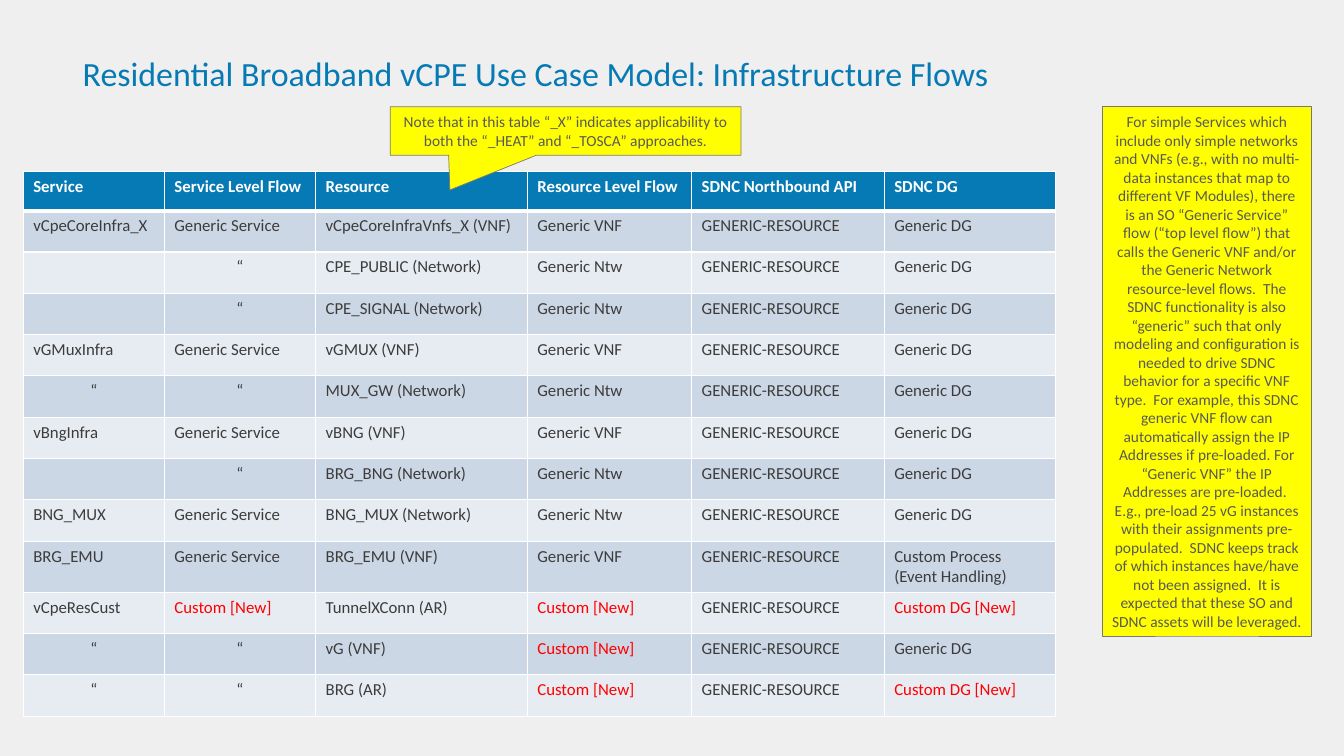
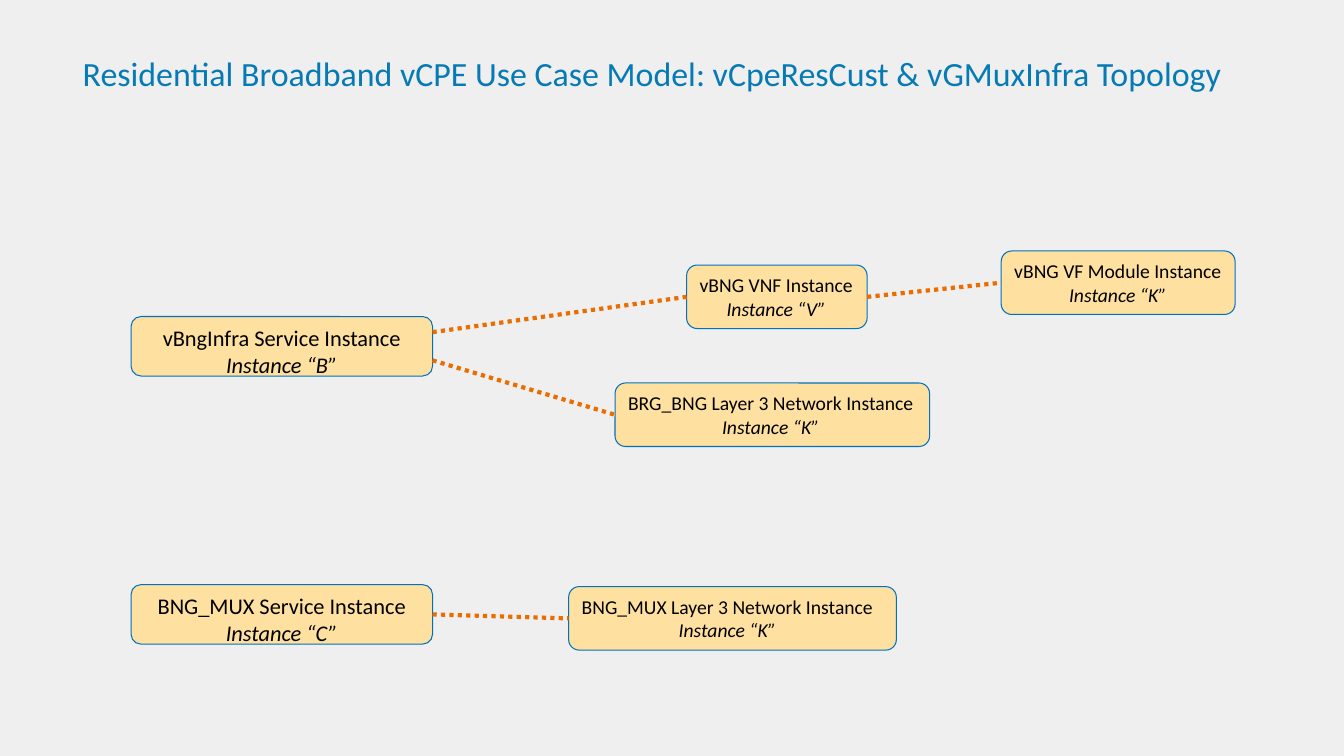
import copy

import pptx
import pptx.dml.color
import pptx.enum.dml
import pptx.enum.shapes
import pptx.enum.text
import pptx.oxml
import pptx.oxml.ns
import pptx.util

RGBColor = pptx.dml.color.RGBColor
Shape = pptx.enum.shapes.MSO_SHAPE
Align = pptx.enum.text.PP_ALIGN
Anchor = pptx.enum.text.MSO_ANCHOR

PX = 9144  # EMU in one px; 100 px to the inch
FONT = "Calibri"
BACKGROUND = RGBColor(0xEF, 0xEF, 0xEF)
BLUE = RGBColor(0x06, 0x7A, 0xB4)
WHITE = RGBColor(0xFF, 0xFF, 0xFF)
BLACK = RGBColor(0x00, 0x00, 0x00)
RED = RGBColor(0xFF, 0x00, 0x00)
CELL_TEXT = RGBColor(0x3C, 0x3C, 0x3C)
BANDS = (RGBColor(0xE7, 0xEC, 0xF2), RGBColor(0xCC, 0xD7, 0xE5))
YELLOW = RGBColor(0xFF, 0xFF, 0x00)
NOTE_LINE = RGBColor(0x78, 0x78, 0x78)
NOTE_TEXT = RGBColor(0x59, 0x59, 0x59)
SAND = RGBColor(0xFE, 0xE1, 0xA1)
NODE_LINE = RGBColor(0x00, 0x70, 0xC0)
ORANGE = RGBColor(0xEA, 0x6D, 0x00)

TITLE_STEM = "Residential Broadband vCPE Use Case Model: "
CALLOUT = ("Note that in this table “_X” indicates applicability to both the "
           "“_HEAT” and “_TOSCA” approaches.")
SIDE_NOTE = (
    "For simple Services which include only simple networks and VNFs (e.g., with no "
    "multi-data instances that map to different VF Modules), there is an SO “Generic "
    "Service” flow (“top level flow”) that calls the Generic VNF and/or the Generic "
    "Network resource-level flows.  The SDNC functionality is also “generic” such that "
    "only modeling and configuration is needed to drive SDNC behavior for a specific "
    "VNF type.  For example, this SDNC generic VNF flow can automatically assign the "
    "IP Addresses if pre-loaded. For “Generic VNF” the IP Addresses are pre-loaded.  "
    "E.g., pre-load 25 vG instances with their assignments pre-populated.  SDNC keeps "
    "track of which instances have/have not been assigned.  It is expected that these "
    "SO and SDNC assets will be leveraged.")

DITTO = "“"
API = "GENERIC-RESOURCE"
SERVICE, VNF, NETWORK, DG = "Generic Service", "Generic VNF", "Generic Ntw", "Generic DG"
CUSTOM, CUSTOM_DG = "Custom [New]", "Custom DG [New]"
COLUMN_WIDTHS = (140, 150, 210, 163, 191, 170)
FLOW_ROWS = (
    ("Service", "Service Level Flow", "Resource", "Resource Level Flow",
     "SDNC Northbound API", "SDNC DG"),
    ("vCpeCoreInfra_X", SERVICE, "vCpeCoreInfraVnfs_X (VNF)", VNF, API, DG),
    ("", DITTO, "CPE_PUBLIC (Network)", NETWORK, API, DG),
    ("", DITTO, "CPE_SIGNAL (Network)", NETWORK, API, DG),
    ("vGMuxInfra", SERVICE, "vGMUX (VNF)", VNF, API, DG),
    (DITTO, DITTO, "MUX_GW (Network)", NETWORK, API, DG),
    ("vBngInfra", SERVICE, "vBNG (VNF)", VNF, API, DG),
    ("", DITTO, "BRG_BNG (Network)", NETWORK, API, DG),
    ("BNG_MUX", SERVICE, "BNG_MUX (Network)", NETWORK, API, DG),
    ("BRG_EMU", SERVICE, "BRG_EMU (VNF)", VNF, API, "Custom Process\n(Event Handling)"),
    ("vCpeResCust", CUSTOM, "TunnelXConn (AR)", CUSTOM, API, CUSTOM_DG),
    (DITTO, DITTO, "vG (VNF)", CUSTOM, API, DG),
    (DITTO, DITTO, "BRG (AR)", CUSTOM, API, CUSTOM_DG),
)


def write(para, text, size, color, bold=False, italic=False, align=None):
    """Fill a paragraph; a newline in the text is a line break."""
    para.text = text
    para.alignment = align
    for span in para.runs:
        span.font.name = FONT
        span.font.size = pptx.util.Pt(size)
        span.font.color.rgb = color
        span.font.bold = bold
        span.font.italic = italic
    for line_break in para._p.findall(pptx.oxml.ns.qn("a:br")):
        line_break.append(copy.deepcopy(para.runs[0]._r.rPr))


def set_borders(cell, top, bottom):
    """Draw white cell borders; top and bottom are widths in points."""
    for side, width in (("L", 1), ("R", 1), ("T", top), ("B", bottom)):
        cell._tc.get_or_add_tcPr().append(pptx.oxml.parse_xml(
            f'<a:ln{side} {pptx.oxml.ns.nsdecls("a")} w="{pptx.util.Pt(width)}">'
            f'<a:solidFill><a:srgbClr val="{WHITE}"/></a:solidFill></a:ln{side}>'))


class Deck:
    def __init__(self):
        self.deck = pptx.Presentation()
        self.deck.slide_width = 1333 * PX
        self.deck.slide_height = 750 * PX
        fill = self.deck.slide_master.background.fill
        fill.solid()
        fill.fore_color.rgb = BACKGROUND
        self.page = None

    def add_page(self, topic):
        self.page = self.deck.slides.add_slide(self.deck.slide_layouts.get_by_name("Title Only"))
        title = self.page.shapes.title
        title.left, title.top, title.width, title.height = (
            length * PX for length in (82, 57, 1219, 50))
        frame = title.text_frame
        frame.margin_left = frame.margin_right = frame.margin_top = frame.margin_bottom = 0
        frame.vertical_anchor = Anchor.TOP
        frame.auto_size = pptx.enum.text.MSO_AUTO_SIZE.NONE
        para = frame.paragraphs[0]
        write(para, TITLE_STEM + topic, 24.2, BLUE, align=Align.LEFT)
        para.line_spacing = 0.9

    def add_box(self, kind, left, top, width, height, fill, line, line_width):
        box = self.page.shapes.add_shape(kind, left * PX, top * PX, width * PX, height * PX)
        box.shadow.inherit = False
        box.fill.solid()
        box.fill.fore_color.rgb = fill
        box.line.color.rgb = line
        box.line.width = pptx.util.Pt(line_width)
        return box

    def add_note(self, text, left, top, width, height, kind=Shape.RECTANGLE):
        box = self.add_box(kind, left, top, width, height, YELLOW, NOTE_LINE, 0.5)
        box.text_frame.word_wrap = True
        box.text_frame.vertical_anchor = Anchor.MIDDLE
        write(box.text_frame.paragraphs[0], text, 11, NOTE_TEXT, align=Align.CENTER)
        return box

    def add_node(self, name, instance, left, top, width, height, size, align, auto_size):
        box = self.add_box(Shape.ROUNDED_RECTANGLE, left, top, width, height,
                           SAND, NODE_LINE, 0.75)
        frame = box.text_frame
        frame.word_wrap = False
        frame.auto_size = auto_size
        frame.vertical_anchor = Anchor.TOP
        write(frame.paragraphs[0], name, size, BLACK, align=align)
        write(frame.add_paragraph(), f"Instance “{instance}”", size, BLACK,
              italic=True, align=Align.CENTER)
        return box

    def add_service(self, name, instance, top):
        return self.add_node(name, instance, 130, top, 299, 59, 16, Align.CENTER,
                             pptx.enum.text.MSO_AUTO_SIZE.NONE)

    def add_resource(self, name, instance, left, top, width):
        return self.add_node(name, instance, left, top, width, 63, 14, Align.LEFT,
                             pptx.enum.text.MSO_AUTO_SIZE.SHAPE_TO_FIT_TEXT)

    def add_link(self, source, target, shift=0):
        """Join right side to left side; shift moves the start off the middle."""
        link = self.page.shapes.add_connector(
            pptx.enum.shapes.MSO_CONNECTOR.STRAIGHT,
            source.left + source.width, source.top + source.height // 2 + shift * PX,
            target.left, target.top + target.height // 2)
        if not shift:
            link.begin_connect(source, 3)
        link.end_connect(target, 1)
        link.line.color.rgb = ORANGE
        link.line.width = pptx.util.Pt(3)
        link.line.dash_style = pptx.enum.dml.MSO_LINE.ROUND_DOT
        link._element.spPr.append(pptx.oxml.parse_xml(
            f'<a:effectLst {pptx.oxml.ns.nsdecls("a")}/>'))

    def add_table(self, rows, widths, left, top, header_height, row_height):
        height = header_height + row_height * (len(rows) - 1)
        table = self.page.shapes.add_table(
            len(rows), len(widths), left * PX, top * PX, sum(widths) * PX, height * PX).table
        for column, width in zip(table.columns, widths):
            column.width = width * PX
        for index, texts in enumerate(rows):
            header = index == 0
            table.rows[index].height = (header_height if header else row_height) * PX
            for cell, text in zip(table.rows[index].cells, texts):
                set_borders(cell, top=3 if index == 1 else 1, bottom=3 if header else 1)
                cell.fill.solid()
                cell.fill.fore_color.rgb = BLUE if header else BANDS[index % 2]
                color = WHITE if header else RED if text.endswith("[New]") else CELL_TEXT
                if text:
                    write(cell.text_frame.paragraphs[0], text, 12, color, bold=header,
                          align=Align.CENTER if text == DITTO else None)


def add_flows(deck):
    deck.add_page("Infrastructure Flows")
    deck.add_table(FLOW_ROWS, COLUMN_WIDTHS, 23, 170, 39, 41)
    callout = deck.add_note(CALLOUT, 387, 106, 348, 48, Shape.RECTANGULAR_CALLOUT)
    callout.adjustments[0] = -0.33
    callout.adjustments[1] = 1.22
    deck.add_note(SIDE_NOTE, 1093, 106, 208, 525)


def add_topology(deck):
    deck.add_page("vCpeResCust & vGMuxInfra Topology")
    mux = deck.add_service("BNG_MUX Service Instance", "C", 580)
    mux_network = deck.add_resource("BNG_MUX Layer 3 Network Instance", "K", 564, 582, 325)
    infra = deck.add_service("vBngInfra Service Instance", "B", 314)
    vnf = deck.add_resource("vBNG VNF Instance", "V", 681, 263, 179)
    module = deck.add_resource("vBNG VF Module Instance", "K", 993, 249, 232)
    network = deck.add_resource("BRG_BNG Layer 3 Network Instance", "K", 610, 380, 312)
    deck.add_link(mux, mux_network)
    deck.add_link(infra, vnf, shift=-14)
    deck.add_link(vnf, module)
    deck.add_link(infra, network, shift=14)


def main():
    deck = Deck()
    add_flows(deck)
    add_topology(deck)
    deck.deck.save("out.pptx")


if __name__ == "__main__":
    main()
